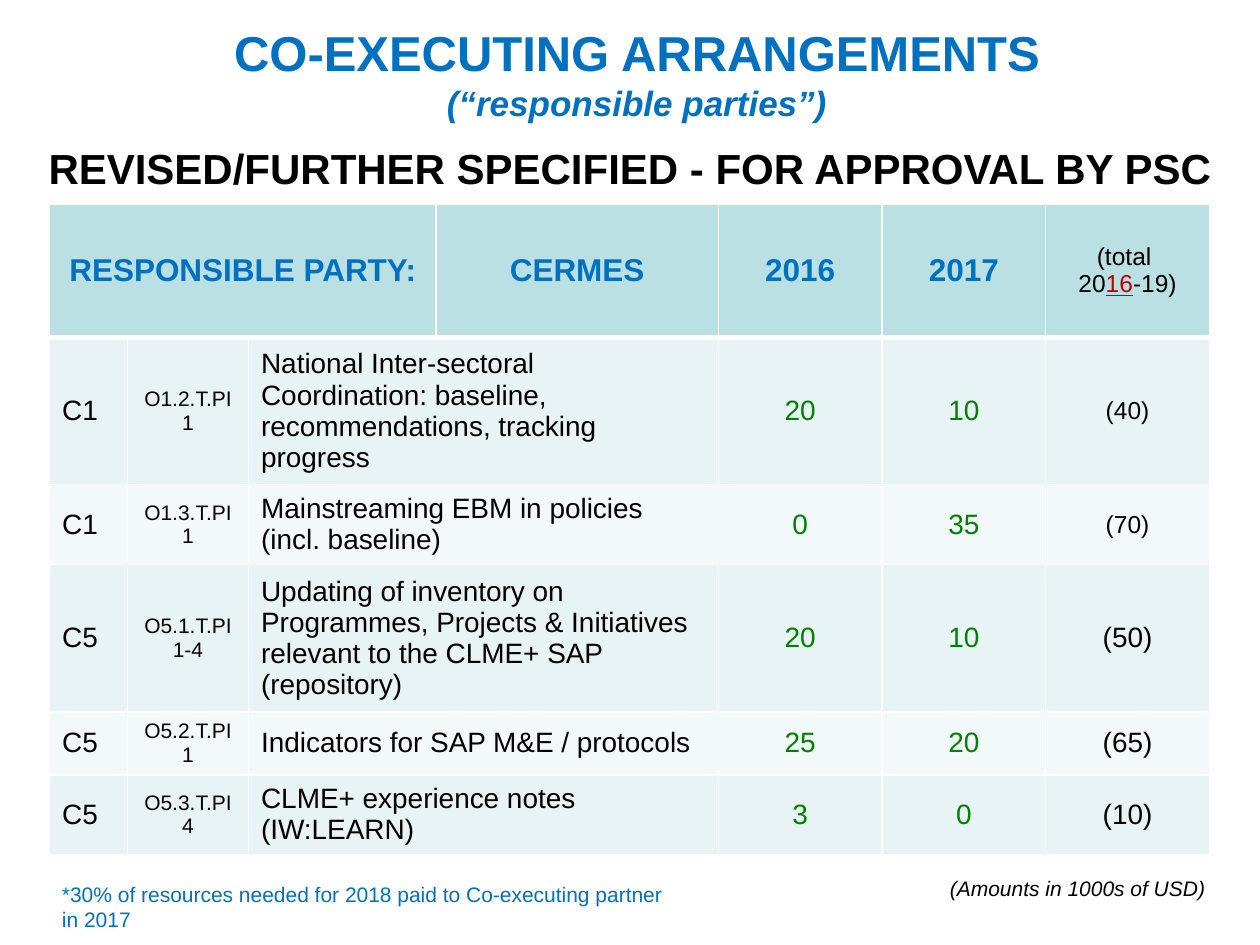
from pptx import Presentation, util as u
from pptx.dml.color import RGBColor
from pptx.enum import text
from pptx.oxml import parse_xml
from pptx.oxml.ns import nsdecls

BLUE, GREEN, BLACK, RED = "0070C0", "008000", "000000", "C00000"
HEAD, BANDS = "BBE0E3", ("E7F3F4", "F3F9FA")
LEFT, CENTER = text.PP_ALIGN.LEFT, text.PP_ALIGN.CENTER

COLS = (1.57, 2.44, 3.78, 5.69, 3.3, 3.3, 3.3)
ROWS = (2.69, 2.97, 1.6, 2.97, 1.27, 1.6)
ACTIVITIES = (
    ("C1", "O1.2.T.PI1", "National Inter-sectoral Coordination: baseline, "
     "recommendations, tracking progress", 20, 10, "(40)", 14),
    ("C1", "O1.3.T.PI1", "Mainstreaming EBM in policies (incl. baseline)",
     0, 35, "(70)", 14),
    ("C5", "O5.1.T.PI1-4", "Updating of inventory on Programmes, Projects & "
     "Initiatives relevant to the CLME+ SAP (repository)", 20, 10, "(50)", 16),
    ("C5", "O5.2.T.PI1", "Indicators for SAP M&E / protocols",
     25, 20, "(65)", 16),
    ("C5", "O5.3.T.PI4", "CLME+ experience notes (IW:LEARN)",
     3, 0, "(10)", 16),
)


def rgb(value):
    return RGBColor.from_string(value)


def style(p, size, color=BLACK, bold=False, italic=False, align=LEFT):
    p.alignment = align
    f = p.font
    f.name, f.size, f.bold, f.italic = "Arial", u.Pt(size), bold, italic
    f.color.rgb = rgb(color)


def place(sp, box):
    sp.left, sp.top, sp.width, sp.height = (u.Cm(v) for v in box)


def add_title(s, box):
    sp = s.shapes.title
    place(sp, box)
    tf = sp.text_frame
    tf.word_wrap = True
    tf.auto_size = text.MSO_AUTO_SIZE.NONE
    tf.vertical_anchor = text.MSO_ANCHOR.TOP
    tf.text = "CO-EXECUTING ARRANGEMENTS\n(“responsible parties”)"
    style(tf.paragraphs[0], 28, BLUE, bold=True, align=CENTER)
    style(tf.paragraphs[1], 20, BLUE, bold=True, italic=True, align=CENTER)


def add_text(s, box, content, size, **look):
    tf = s.shapes.add_textbox(*(u.Cm(v) for v in box)).text_frame
    tf.word_wrap = True
    tf.text = content
    style(tf.paragraphs[0], size, **look)


def format_cell(cell, fill, top=1, bottom=1):
    cell.vertical_anchor = text.MSO_ANCHOR.MIDDLE
    tcPr = cell._tc.get_or_add_tcPr()
    for side, width in (("L", 1), ("R", 1), ("T", top), ("B", bottom)):
        tcPr.append(parse_xml(
            f'<a:ln{side} {nsdecls("a")} w="{u.Pt(width)}"><a:solidFill>'
            f'<a:srgbClr val="FFFFFF"/></a:solidFill></a:ln{side}>'))
    cell.fill.solid()
    cell.fill.fore_color.rgb = rgb(fill)


def write(cell, content, size, **look):
    cell.text = str(content)
    for p in cell.text_frame.paragraphs:
        style(p, size, **look)


def add_total_heading(cell):
    write(cell, "(total \n20", 14, align=CENTER)
    p = cell.text_frame.paragraphs[1]
    r = p.add_run()
    r.text = "16"
    r.font.underline = True
    r.font.color.rgb = rgb(RED)
    p.add_run().text = "-19)"


def add_budget_table(s, left, top):
    tbl = s.shapes.add_table(len(ROWS), len(COLS), u.Cm(left), u.Cm(top),
                             u.Cm(sum(COLS)), u.Cm(sum(ROWS))).table
    for col, width in zip(tbl.columns, COLS):
        col.width = u.Cm(width)
    for row, height in zip(tbl.rows, ROWS):
        row.height = u.Cm(height)
    for i, row in enumerate(tbl.rows):
        for cell in row.cells:
            format_cell(cell, BANDS[(i - 1) % 2] if i else HEAD,
                        top=3 if i == 1 else 1, bottom=1 if i else 3)

    tbl.cell(0, 0).merge(tbl.cell(0, 2))
    headings = {0: "RESPONSIBLE PARTY:", 3: "CERMES", 4: "2016", 5: "2017"}
    for j, heading in headings.items():
        write(tbl.cell(0, j), heading, 18, color=BLUE, bold=True, align=CENTER)
    add_total_heading(tbl.cell(0, 6))

    for i, (component, code, activity, y2016, y2017, total, size) in enumerate(
            ACTIVITIES, 1):
        tbl.cell(i, 2).merge(tbl.cell(i, 3))
        write(tbl.cell(i, 0), component, 16)
        write(tbl.cell(i, 1), code, 12, align=CENTER)
        write(tbl.cell(i, 2), activity, 16)
        write(tbl.cell(i, 4), y2016, 16, color=GREEN, align=CENTER)
        write(tbl.cell(i, 5), y2017, 16, color=GREEN, align=CENTER)
        write(tbl.cell(i, 6), total, size, align=CENTER)


def main():
    prs = Presentation()
    prs.slide_width, prs.slide_height = u.Cm(25.4), u.Cm(19.05)
    s = prs.slides.add_slide(prs.slide_layouts[5])
    add_title(s, (4.09, 0.33, 17.5, 2.31))
    add_text(s, (0.3, 2.74, 24.8, 1.27),
             "REVISED/FURTHER SPECIFIED - FOR APPROVAL BY PSC", 24,
             bold=True, align=CENTER)
    add_budget_table(s, 1, 4.11)
    add_text(s, (18.9, 17.53, 6.5, 0.76), "(Amounts in 1000s of USD)", 12,
             italic=True)
    add_text(s, (1, 17.65, 12.8, 1.27),
             "*30% of resources needed for 2018 paid to Co-executing partner "
             "in 2017", 12, color=BLUE)
    prs.save("out.pptx")


if __name__ == "__main__":
    main()
